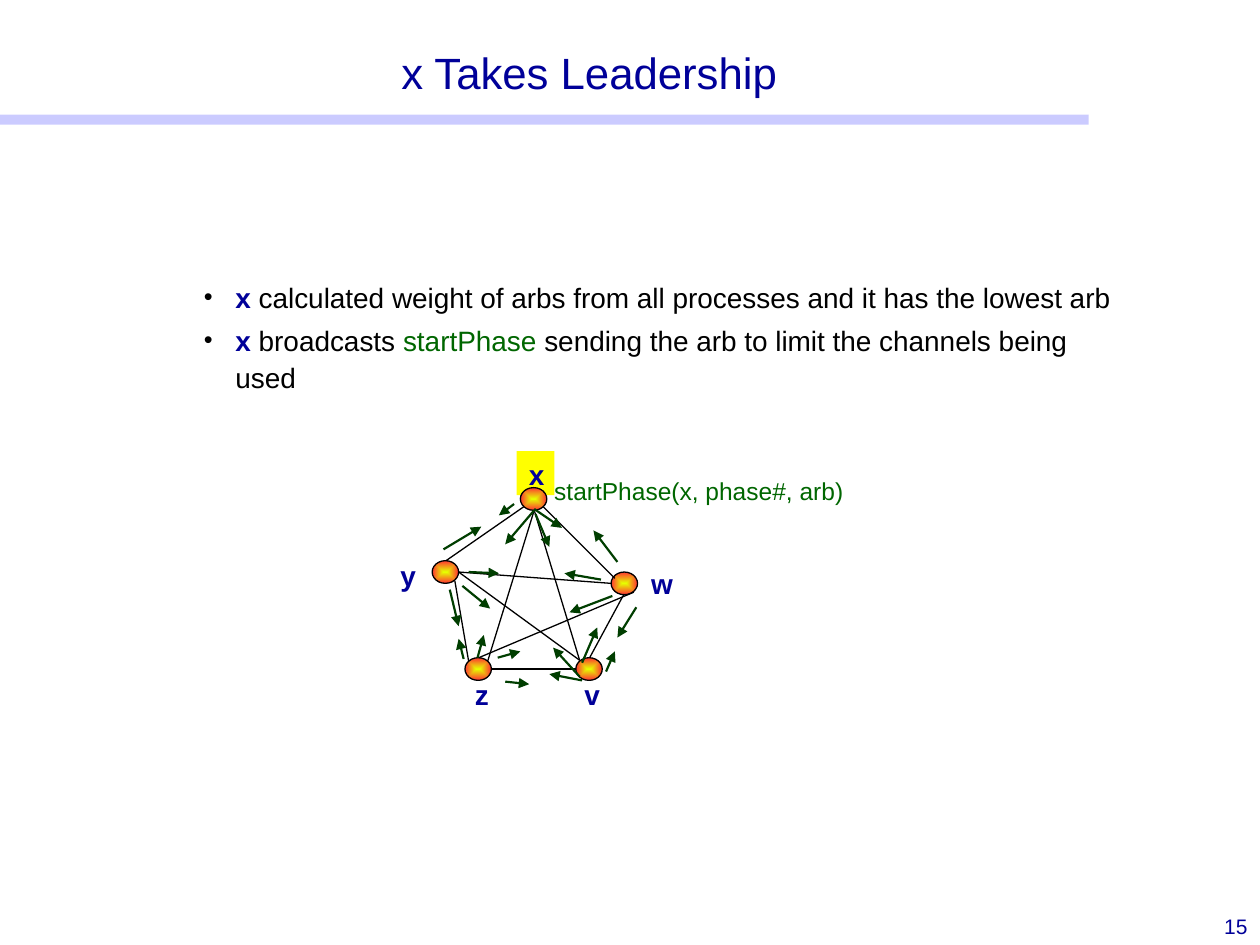
import pptx
import pptx.util
import pptx.dml.color
import pptx.enum.dml
import pptx.enum.shapes
import pptx.enum.text
import pptx.oxml
import pptx.oxml.ns
from lxml import etree

Inches, Pt = pptx.util.Inches, pptx.util.Pt
RGB = pptx.dml.color.RGBColor.from_string
ALIGN = pptx.enum.text.PP_ALIGN
ANCHOR = pptx.enum.text.MSO_ANCHOR
SHAPE = pptx.enum.shapes.MSO_SHAPE
qn = pptx.oxml.ns.qn
HUES = {"navy": "000099", "bar": "9999FF", "black": "000000", "green": "006600",
        "arrow": "003E00", "box": "FFFF00", "core": "E6FF00", "rim": "FF3333"}


def write(text, para, size=16, hue="navy", bold=False, align=ALIGN.LEFT):
    para.alignment = align
    run = para.add_run()
    run.text = text
    run.font.name = "Arial"
    run.font.size = Pt(size)
    run.font.bold = bold
    run.font.color.rgb = RGB(HUES[hue])


def link(ends, hue, width):
    line = slide.shapes.add_connector(
        pptx.enum.shapes.MSO_CONNECTOR.STRAIGHT, *[Inches(n) for n in ends])
    line.line.color.rgb = RGB(HUES[hue])
    line.line.width = Pt(width)
    etree.SubElement(line._element.spPr, qn("a:effectLst"))
    return line


deck = pptx.Presentation()
deck.slide_width, deck.slide_height = Inches(10), Inches(7.5)
slide = deck.slides.add_slide(deck.slide_layouts[5])

bar = slide.shapes.add_shape(SHAPE.RECTANGLE, 0, Inches(0.91), Inches(8.64), Inches(0.08))
bar.shadow.inherit = False
bar.line.fill.background()
bar.fill.solid()
bar.fill.fore_color.rgb = RGB(HUES["bar"])
tint = bar._element.spPr.find(".//" + qn("a:srgbClr"))
etree.SubElement(tint, qn("a:alpha"), val="50000")

title = slide.shapes.title
title.left, title.top = Inches(1.1), Inches(0.3)
title.width, title.height = Inches(7.15), Inches(0.53)
frame = title.text_frame
frame.auto_size = pptx.enum.text.MSO_AUTO_SIZE.NONE
frame.vertical_anchor = ANCHOR.BOTTOM
frame.paragraphs[0].line_spacing = 1.1
write("x Takes Leadership", frame.paragraphs[0], size=25, align=ALIGN.CENTER)

page = slide.shapes.add_textbox(Inches(9.5), Inches(7.2), Inches(0.5), Inches(0.3))
page.text_frame.word_wrap = True
write("15", page.text_frame.paragraphs[0], size=12, align=ALIGN.RIGHT)

body = slide.shapes.add_textbox(Inches(1.52), Inches(2.15), Inches(7.44), Inches(1.4))
body.text_frame.word_wrap = True
points = [
    [("x", "navy"),
     (" calculated weight of arbs from all processes and it has the lowest arb", "black")],
    [("x", "navy"), (" broadcasts ", "black"), ("startPhase", "green"),
     (" sending the arb to limit the channels being used", "black")],
]
for i, point in enumerate(points):
    para = body.text_frame.add_paragraph() if i else body.text_frame.paragraphs[0]
    props = para._p.get_or_add_pPr()
    props.set("marL", str(Inches(0.25)))
    props.set("indent", str(-Inches(0.25)))
    tone = etree.SubElement(props, qn("a:buClr"))
    etree.SubElement(tone, qn("a:srgbClr"), val=HUES["black"])
    etree.SubElement(props, qn("a:buSzPct"), val="90000")
    etree.SubElement(props, qn("a:buFont"), typeface="Arial")
    etree.SubElement(props, qn("a:buChar"), char="•")
    para.line_spacing = 1.1
    if i:
        para.space_before = Pt(3.5)
    for text, hue in point:
        write(text, para, hue=hue, bold=hue == "navy")

call = slide.shapes.add_textbox(Inches(4.3), Inches(3.73), Inches(2.51), Inches(0.31))
call.text_frame.word_wrap = False
write("startPhase(x, phase#, arb)", call.text_frame.paragraphs[0], size=14, hue="green")

labels = [("y", 3.08, 4.38, 0.3), ("z", 3.67, 5.33, 0.29), ("w", 5.07, 4.45, 0.34),
          ("x", 4.1, 3.58, 0.3), ("v", 4.54, 5.33, 0.3)]
for name, left, top, width in labels:
    label = slide.shapes.add_textbox(Inches(left), Inches(top), Inches(width), Inches(0.35))
    label.text_frame.word_wrap = False
    write(name, label.text_frame.paragraphs[0], bold=True, align=ALIGN.CENTER)
    if name == "x":
        label.fill.solid()
        label.fill.fore_color.rgb = RGB(HUES["box"])

for left, top in [(3.43, 4.45), (3.69, 5.22), (4.85, 4.54), (4.13, 3.87), (4.57, 5.22)]:
    node = slide.shapes.add_shape(
        SHAPE.OVAL, Inches(left), Inches(top), Inches(0.21), Inches(0.18))
    node.shadow.inherit = False
    node.line.color.rgb = RGB(HUES["black"])
    node.line.width = Pt(0.75)
    node.fill.gradient()
    for stop, hue in zip(node.fill.gradient_stops, ("core", "rim")):
        stop.color.rgb = RGB(HUES[hue])
    grad = node._element.spPr.find(qn("a:gradFill"))
    grad.remove(grad.find(qn("a:lin")))
    focus = etree.SubElement(grad, qn("a:path"), {"path": "shape"})
    etree.SubElement(focus, qn("a:fillToRect"), {side: "50000" for side in "ltrb"})

edges = [
    (5.03, 4.7, 3.8, 5.22), (4.16, 4.02, 3.54, 4.45), (4.24, 4.05, 3.87, 5.25),
    (3.61, 4.61, 3.72, 5.25), (4.31, 4.02, 4.88, 4.59), (3.64, 4.54, 4.85, 4.63),
    (3.64, 4.54, 4.6, 5.24), (4.95, 4.72, 4.68, 5.22), (3.9, 5.31, 4.57, 5.31),
    (4.24, 4.05, 4.6, 5.24),
]
for ends in edges:
    link(ends, "black", 0.75)

sends = [
    (3.68, 5.23, 3.64, 5.07), (3.79, 5.22, 3.84, 5.04), (3.95, 5.22, 4.13, 5.17),
    (4.01, 5.41, 4.2, 5.43), (5.05, 4.82, 4.9, 5.06), (4.86, 4.73, 4.52, 4.86),
    (4.77, 4.6, 4.48, 4.55), (4.9, 4.46, 4.71, 4.21), (3.52, 4.36, 3.82, 4.18),
    (3.67, 4.65, 3.89, 4.83), (3.72, 4.54, 3.96, 4.55), (3.57, 4.68, 3.64, 4.97),
    (4.62, 5.4, 4.36, 5.35), (4.6, 5.37, 4.39, 5.14), (4.62, 5.26, 4.74, 4.98),
    (4.81, 5.33, 4.88, 5.17), (4.24, 4.04, 4.46, 4.19), (4.25, 4.08, 4.36, 4.34),
    (4.24, 4.05, 4.01, 4.32), (4.08, 4, 3.96, 4.09),
]
for ends in sends:
    arrow = link(ends, "arrow", 1.25)
    etree.SubElement(arrow.line._get_or_add_ln(), qn("a:tailEnd"), type="triangle")

deck.save("out.pptx")
